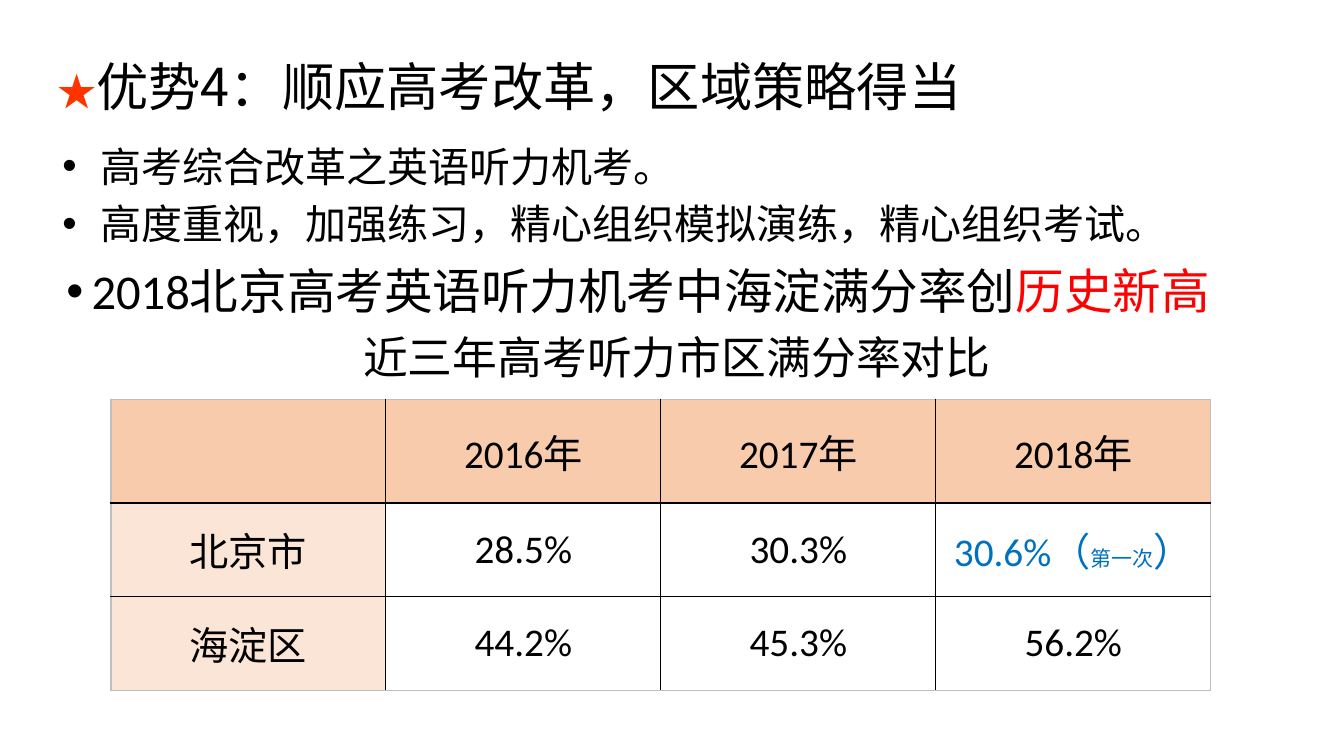
from lxml import etree
from pptx import Presentation
from pptx.dml.color import RGBColor
from pptx.enum.text import MSO_ANCHOR, PP_ALIGN
from pptx.oxml.ns import qn
from pptx.util import Inches, Pt

CENTER, LEFT = PP_ALIGN.CENTER, PP_ALIGN.LEFT
MIDDLE = MSO_ANCHOR.MIDDLE
SANS, LATIN = "Noto Sans CJK SC", "Calibri"
BLACK, RED, BLUE = "000000", "FF0000", "0070C0"


def write(p, runs, font, align=LEFT, indent=0, bullet=False):
    """Fill a paragraph with (text, size, colour) runs and set its layout."""
    p.alignment = align
    for text, size, color in runs:
        r = p.add_run()
        r.text = text
        r.font.size = Pt(size)
        r.font.name = font
        r.font.color.rgb = RGBColor.from_string(color)
        etree.SubElement(r._r.get_or_add_rPr(), qn("a:ea"), typeface=SANS)
    pPr = p._p.get_or_add_pPr()
    if indent:
        pPr.set("marL", str(Inches(indent)))
        pPr.set("indent", str(-Inches(indent)))
    if bullet:
        etree.SubElement(pPr, qn("a:buFont"), typeface="Arial")
        etree.SubElement(pPr, qn("a:buChar"), char="•")


def add_text_frame(left, top, width, height, inset_x=0.1, inset_y=0.05):
    tf = slide.shapes.add_textbox(
        Inches(left), Inches(top), Inches(width), Inches(height)).text_frame
    tf.word_wrap = True
    tf.margin_left = tf.margin_right = Inches(inset_x)
    tf.margin_top = tf.margin_bottom = Inches(inset_y)
    return tf


prs = Presentation()
prs.slide_width, prs.slide_height = Inches(13.33), Inches(7.5)
slide = prs.slides.add_slide(prs.slide_layouts[6])

# Title
tf = add_text_frame(0.47, 0.49, 12.48, 1.32)
write(tf.paragraphs[0],
      [("★", 28, "FF3300"), ("优势4：顺应高考改革，区域策略得当", 37.3, BLACK)],
      SANS, indent=0.38)

# Measures
tf = add_text_frame(0.49, 1.33, 12.84, 1.29, 0.13, 0.07)
measures = ["高考综合改革之英语听力机考。",
            "高度重视，加强练习，精心组织模拟演练，精心组织考试。"]
for i, measure in enumerate(measures):
    p = tf.add_paragraph() if i else tf.paragraphs[0]
    p.space_before = Pt(5.9)
    write(p, [(measure, 29.3, BLACK)], SANS, indent=0.38, bullet=True)

# Result
tf = add_text_frame(0.56, 2.6, 12.84, 0.71)
tf.paragraphs[0].line_spacing = 0.9
write(tf.paragraphs[0],
      [("2018北京高考英语听力机考中海淀满分率创", 34.7, BLACK),
       ("历史新高", 34.7, RED)],
      LATIN, indent=0.25, bullet=True)

# Table caption
tf = add_text_frame(2.74, 3.22, 7.95, 0.64)
write(tf.paragraphs[0], [("近三年高考听力市区满分率对比", 32, BLACK)], SANS, CENTER)

# Full-mark rates
rows = [["", "2016年", "2017年", "2018年"],
        ["北京市", "28.5%", "30.3%", "30.6%（第一次）"],
        ["海淀区", "44.2%", "45.3%", "56.2%"]]
first_time = [("30.6%（", 28, BLUE), ("第一次", 15, BLUE), ("）", 28, BLUE)]
n_rows, n_cols = len(rows), len(rows[0])
table = slide.shapes.add_table(n_rows, n_cols, Inches(1.1), Inches(3.96),
                               Inches(10.91), Inches(2.88)).table
for column in table.columns:
    column.width = Inches(10.91 / n_cols)
for row, height in zip(table.rows, (1.03, 0.93, 0.93)):
    row.height = Inches(height)

for i, row in enumerate(rows):
    for j, text in enumerate(row):
        cell = table.cell(i, j)
        cell.vertical_anchor = MIDDLE
        runs = first_time if (i, j) == (1, 3) else [(text, 28, BLACK)]
        write(cell.text_frame.paragraphs[0], runs, LATIN, CENTER)
        tcPr = cell._tc.get_or_add_tcPr()
        outer = {"L": j == 0, "R": j == n_cols - 1,
                 "T": i == 0, "B": i == n_rows - 1}
        for side, is_outer in outer.items():
            ln = etree.SubElement(tcPr, qn(f"a:ln{side}"), w=str(Pt(1)))
            fill = etree.SubElement(ln, qn("a:solidFill"))
            etree.SubElement(fill, qn("a:srgbClr"),
                             val="BFBFBF" if is_outer else BLACK)
        cell.fill.solid()
        color = "F8CBAD" if i == 0 else "FBE5D6" if j == 0 else "FFFFFF"
        cell.fill.fore_color.rgb = RGBColor.from_string(color)

prs.save("out.pptx")
